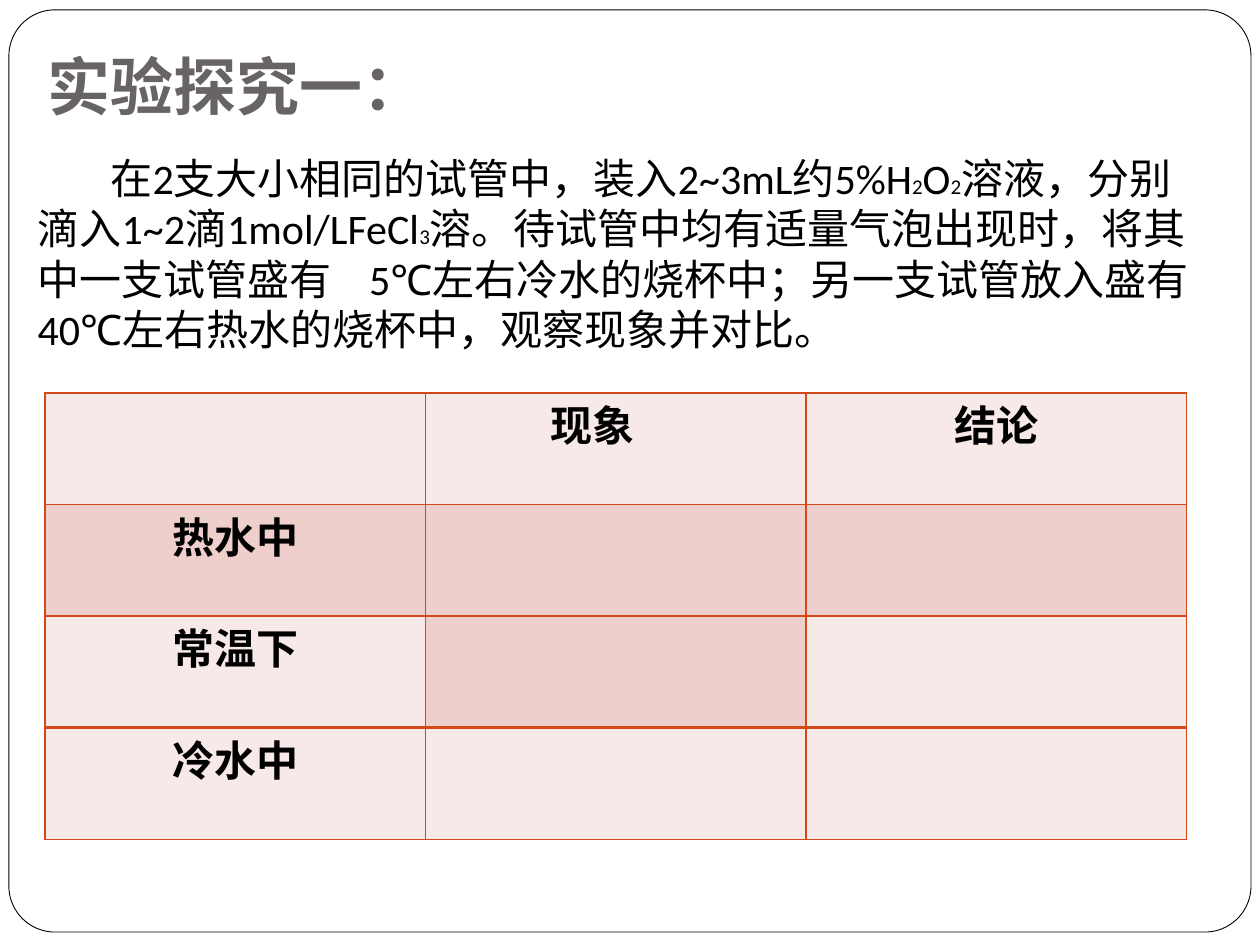
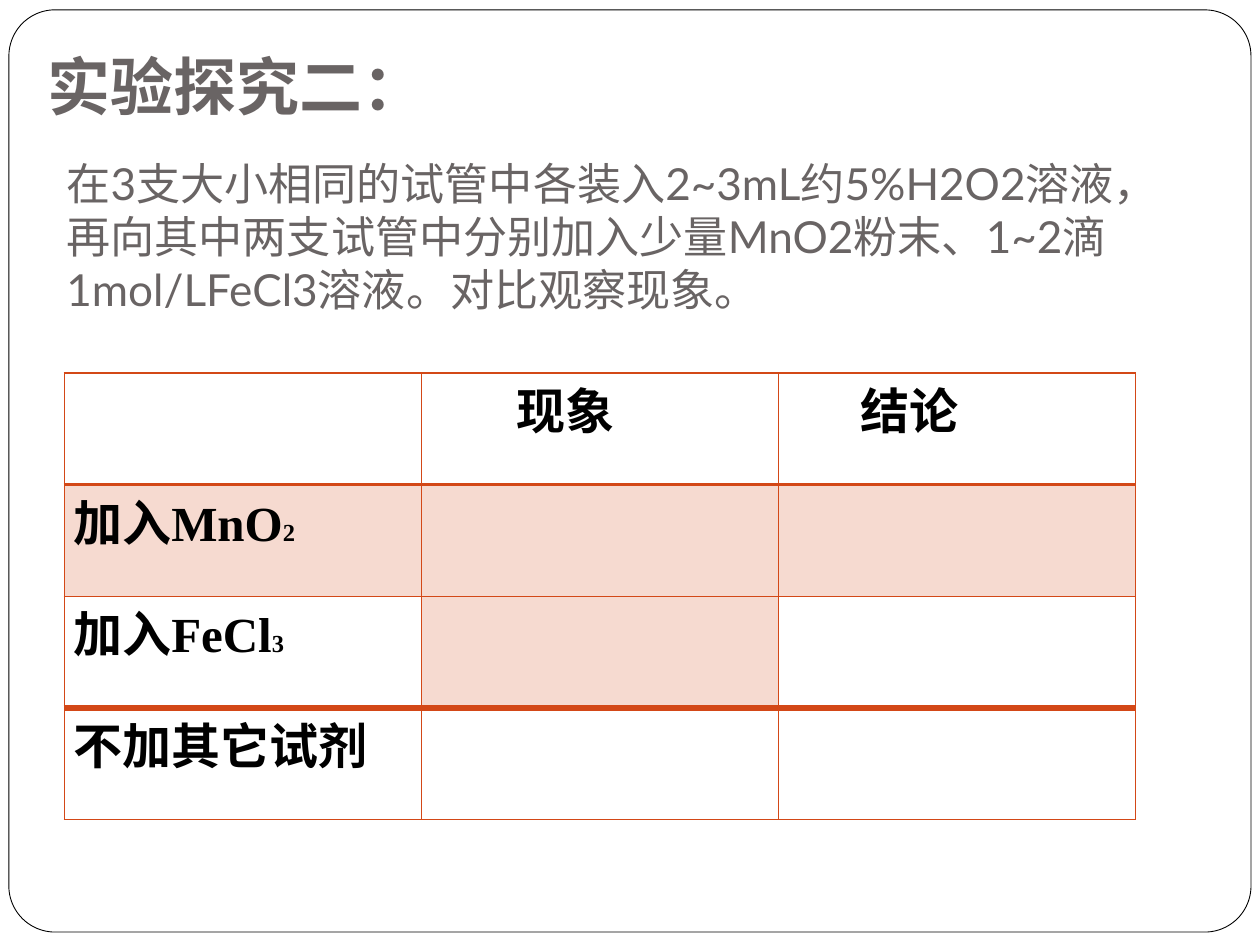
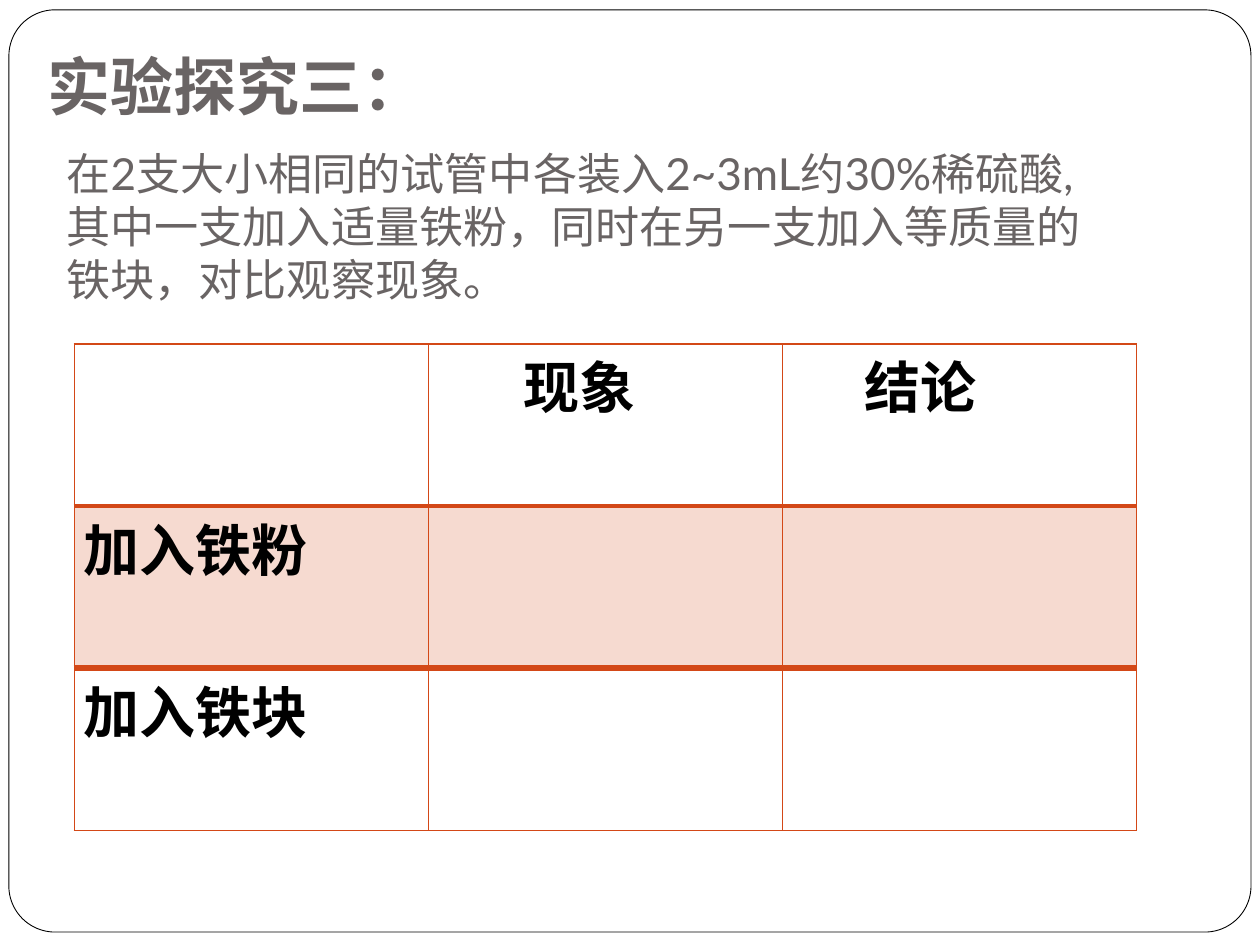
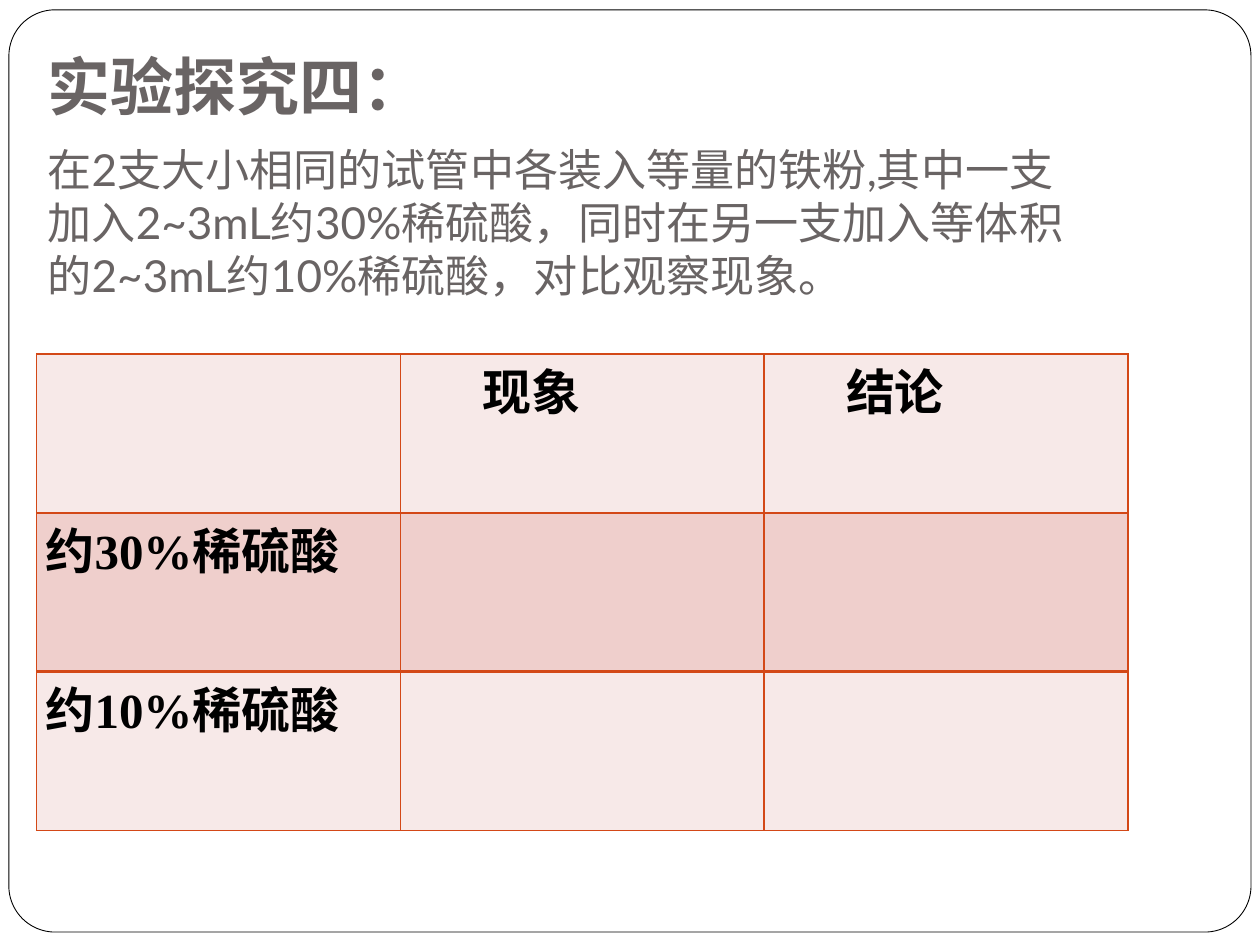
from lxml.etree import SubElement
from pptx import Presentation
from pptx.dml.color import RGBColor
from pptx.enum.shapes import MSO_SHAPE
from pptx.enum.text import MSO_ANCHOR, PP_ALIGN
from pptx.oxml.ns import qn
from pptx.util import Cm, Pt

hue = RGBColor.from_string
BLACK, GREY, RUST = "000000", "696464", "D34817"
PINK, ROSE = "F7E9E8", "EFCFCC"
HEADS = ["现象", "结论"]


def write(frame, runs, font, color, bold=False, indent=0, align=None):
    para = frame.paragraphs[0]
    para.alignment = align
    if indent:
        para._p.get_or_add_pPr().set("indent", str(Cm(indent)))
    for text, size in runs:
        run = para.add_run()
        run.text = text
        run.font.size = Pt(size)
        run.font.name = font
        run.font.bold = bold
        run.font.color.rgb = hue(color)
        if text == " ":
            run.font._element.set("spc", "1600")


def add_box(slide, place, anchor, foot):
    frame = slide.shapes.add_textbox(*map(Cm, place)).text_frame
    frame.word_wrap = True
    frame.vertical_anchor = anchor
    frame.margin_left = frame.margin_right = Cm(0.25)
    frame.margin_top, frame.margin_bottom = Cm(0.13), Cm(foot)
    return frame


pages = [
    {
        "title": "实验探究一：",
        "body": [
            ("在2支大小相同的试管中，装入2~3mL约5%H", 24), ("2", 12), ("O", 24), ("2", 12),
            ("溶液，分别滴入1~2滴1mol/LFeCl", 24), ("3", 12),
            ("溶。待试管中均有适量气泡出现时，将其中一支试管盛有", 24), (" ", 24),
            ("5℃左右冷水的烧杯中；另一支试管放入盛有40℃左右热水的烧杯中，观察现象并对比。", 24),
        ],
        "place": (0.51, 2.92, 23.83, 4.37),
        "look": ("Calibri", BLACK, 1.47, MSO_ANCHOR.MIDDLE, 0.13),
        "grid": (0.91, 7.92, 23.01, 2.25),
        "labels": [[("热水中", 24)], [("常温下", 24)], [("冷水中", 24)]],
        "align": PP_ALIGN.CENTER,
        "size": 24, "indents": (2.34, 2.82), "tint": True, "rules": (1, 2),
    },
    {
        "title": "实验探究二：",
        "body": [("在3支大小相同的试管中各装入2~3mL约5%H2O2溶液，再向其中两支试管中分别加入少量MnO2粉末、1~2滴1mol/LFeCl3溶液。对比观察现象。", 25.2)],
        "place": (1.09, 2.67, 22.2, 5),
        "grid": (1.3, 7.52, 21.59, 2.25),
        "labels": [[("加入MnO", 28), ("2", 14)], [("加入FeCl", 28), ("3", 14)], [("不加其它试剂", 28)]],
        "size": 28, "indents": (1.73, 1.47), "tint": False, "rules": (2, 4),
    },
    {
        "title": "实验探究三：",
        "body": [("在2支大小相同的试管中各装入2~3mL约30%稀硫酸,其中一支加入适量铁粉，同时在另一支加入等质量的铁块，对比观察现象。", 25.2)],
        "place": (1.09, 2.87, 21.59, 4.6),
        "grid": (1.5, 6.93, 21.41, 3.27),
        "labels": [[("加入铁粉", 32)], [("加入铁块", 32)]],
        "size": 32, "indents": (1.73, 1.47), "tint": False, "rules": (2, 4),
    },
    {
        "title": "实验探究四：",
        "body": [("在2支大小相同的试管中各装入等量的铁粉,其中一支加入2~3mL约30%稀硫酸，同时在另一支加入等体积的2~3mL约10%稀硫酸，对比观察现象。", 25.2)],
        "place": (0.71, 2.82, 21.59, 4.57),
        "grid": (0.74, 7.14, 22, 3.2),
        "labels": [[("约30%稀硫酸", 28)], [("约10%稀硫酸", 28)]],
        "size": 28, "indents": (1.47, 1.47), "tint": True, "rules": (1, 2),
    },
]

deck = Presentation()
deck.slide_width, deck.slide_height = Cm(25.4), Cm(19.05)

for page in pages:
    slide = deck.slides.add_slide(deck.slide_layouts[6])

    card = slide.shapes.add_shape(MSO_SHAPE.ROUNDED_RECTANGLE, Cm(0.18), Cm(0.2), Cm(25.04), Cm(18.59))
    card.adjustments[0] = 0.05
    card.shadow.inherit = False
    card.fill.solid()
    card.fill.fore_color.rgb = hue("FFFFFF")
    card.line.color.rgb = hue(BLACK)
    card.line.width = Pt(0.5)

    title = add_box(slide, (0.71, 0.53, 21.59, 2.21), MSO_ANCHOR.BOTTOM, 0.25)
    write(title, [(page["title"], 36)], "Lato", GREY, bold=True)

    font, color, indent, anchor, foot = page.get("look", ("Lato", GREY, 0, MSO_ANCHOR.BOTTOM, 1.32))
    body = add_box(slide, page["place"], anchor, foot)
    write(body, page["body"], font, color, indent=indent)

    left, top, width, high = page["grid"]
    count = len(page["labels"]) + 1
    table = slide.shapes.add_table(count, 3, Cm(left), Cm(top), Cm(width), Cm(high * count)).table
    table.first_row = table.horz_banding = False
    for col in table.columns:
        col.width = Cm(width / 3)

    first, last = page["rules"]
    rules = [1, first] + [1] * (count - 1)
    rules[count - 1] = last

    for row in range(count):
        table.rows[row].height = Cm(high)
        for col in range(3):
            cell = table.cell(row, col)
            cell.margin_left = cell.margin_right = Cm(0.18)
            cell.margin_top = cell.margin_bottom = 0
            props = cell._tc.get_or_add_tcPr()
            for side, thick in zip("LRTB", (1, 1, rules[row], rules[row + 1])):
                line = SubElement(props, qn("a:ln" + side), w=str(Pt(thick)))
                paint = SubElement(line, qn("a:solidFill"))
                SubElement(paint, qn("a:srgbClr"), val=RUST)

            dark = row == 1 or (count == 4 and (row, col) == (2, 1))
            if page["tint"]:
                cell.fill.solid()
                cell.fill.fore_color.rgb = hue(ROSE if dark else PINK)
            elif dark:
                cell.fill.solid()
                cell.fill.fore_color.rgb = hue(RUST)
                shade = props.find(qn("a:solidFill")).find(qn("a:srgbClr"))
                SubElement(shade, qn("a:alpha"), val="20000")
            else:
                cell.fill.background()

            if row == 0 and col:
                write(cell.text_frame, [(HEADS[col - 1], page["size"])], "Times New Roman", BLACK,
                      True, page["indents"][col - 1], PP_ALIGN.JUSTIFY)
            elif row and col == 0:
                write(cell.text_frame, page["labels"][row - 1], "Times New Roman", BLACK,
                      True, align=page.get("align", PP_ALIGN.JUSTIFY))

deck.save("out.pptx")
